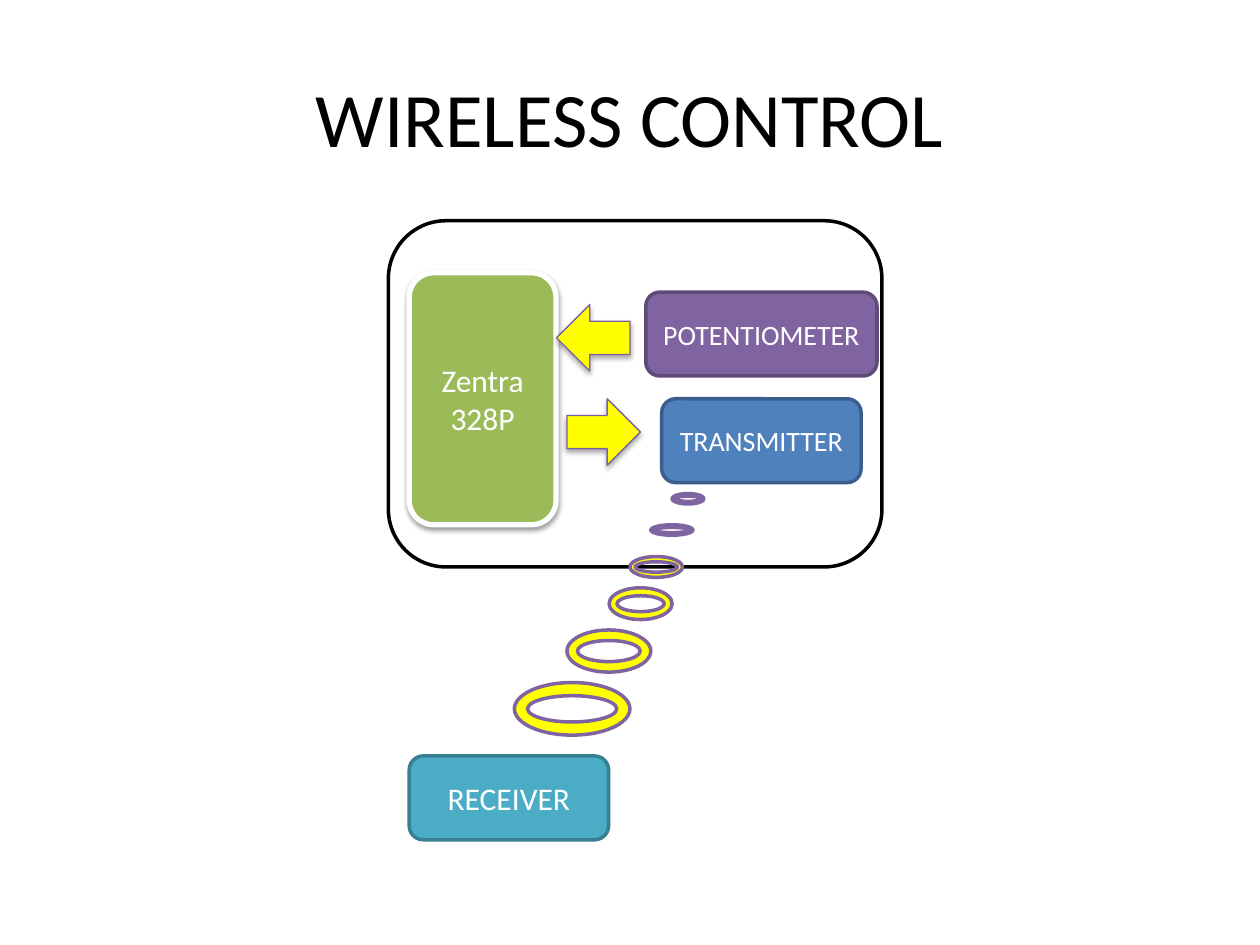
"""Build the wireless control block diagram slide."""
from lxml import etree
from pptx import Presentation
from pptx.dml.color import RGBColor
from pptx.enum.shapes import MSO_SHAPE
from pptx.enum.text import MSO_ANCHOR, PP_ALIGN
from pptx.oxml.ns import qn
from pptx.util import Cm, Pt

ROUND = MSO_SHAPE.ROUNDED_RECTANGLE
ARROW = MSO_SHAPE.RIGHT_ARROW
RING = MSO_SHAPE.DONUT
MIDDLE = MSO_ANCHOR.MIDDLE
CENTER = PP_ALIGN.CENTER


def paint(target, color):
    if hasattr(target, "solid"):
        target.solid()
        target.fore_color.rgb = RGBColor.from_string(color)
    else:
        target.rgb = RGBColor.from_string(color)


def write(shape, text, size, color):
    frame = shape.text_frame
    frame.word_wrap = True
    frame.vertical_anchor = MIDDLE
    para = frame.paragraphs[0]
    para.alignment = CENTER
    run = para.add_run()
    run.text = text
    run.font.name = "Calibri"
    run.font.size = Pt(size)
    paint(run.font.color, color)


deck = Presentation()
deck.slide_width = Cm(25.4)
deck.slide_height = Cm(19.05)
slide = deck.slides.add_slide(deck.slide_layouts[6])

title = slide.shapes.add_textbox(Cm(1.27), Cm(0.76), Cm(22.86), Cm(3.18))
write(title, "WIRELESS CONTROL", 44, "000000")

chip = (ROUND, (8.25, 5.5, 2.96, 5.08), "9BBB59", "FFFFFF", 3, "Zentra 328P", 18)
case = (ROUND, (7.83, 4.45, 9.95, 6.98), None, "000000", 2, "", 0)
boxes = [
    (ROUND, (left, top, width, 1.69), fill, line, 2, text, size)
    for left, top, width, fill, line, text, size in [
        (8.25, 15.24, 4.02, "4BACC6", "377F92", "RECEIVER", 18),
        (13.34, 8.04, 4.02, "4F81BD", "3A5F8C", "TRANSMITTER", 16),
        (13.02, 5.89, 4.66, "8064A2", "5F4A78", "POTENTIOMETER", 16),
    ]
]
arrows = [
    (ARROW, (left, top, 1.48, 1.34), "FFFF00", "7D60A0", 0.75, "", 0)
    for left, top in [(11.43, 8.04), (11.22, 6.14)]
]
rings = [
    (RING, place, "FFFF00", "8064A2", 2, "", 0)
    for place in [
        (13.55, 9.95, 0.64, 0.21),
        (13.12, 10.58, 0.85, 0.21),
        (12.7, 11.22, 1.06, 0.42),
        (12.28, 11.85, 1.27, 0.64),
        (11.43, 12.7, 1.69, 0.85),
        (10.37, 13.76, 2.33, 1.06),
    ]
]

drawn = []
for kind, place, fill, line, weight, text, size in [chip, case, *boxes, *arrows, *rings]:
    shape = slide.shapes.add_shape(kind, *map(Cm, place))
    shape.shadow.inherit = False
    if fill:
        paint(shape.fill, fill)
    else:
        shape.fill.background()
    paint(shape.line.fill, line)
    shape.line.width = Pt(weight)
    if text:
        write(shape, text, size, "FFFFFF")
    drawn.append(shape)

lower, upper = drawn[5:7]
upper.rotation = 180

for shape, drop, alpha in [(drawn[0], 1.6, 38), (lower, 1.8, 35), (upper, 1.8, 35)]:
    effect = shape.element.spPr.find(qn("a:effectLst"))
    shade = etree.SubElement(
        effect, qn("a:outerShdw"), blurRad=str(Pt(3.1)), dist=str(Pt(drop)),
        dir="5400000", rotWithShape="0",
    )
    black = etree.SubElement(shade, qn("a:srgbClr"), val="000000")
    etree.SubElement(black, qn("a:alpha"), val=str(alpha * 1000))

deck.save("out.pptx")
